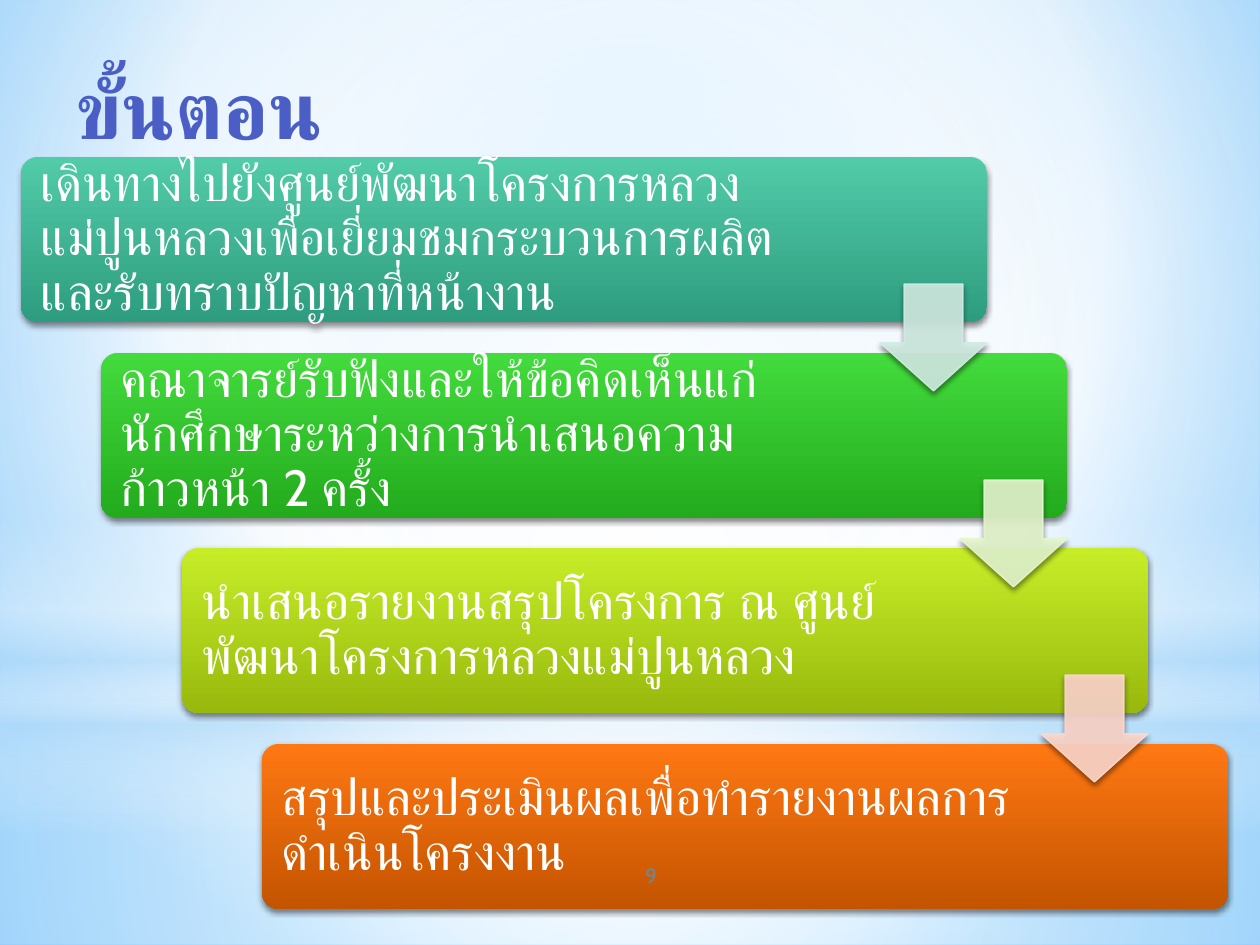
from dataclasses import dataclass

import pptx
import pptx.dml.color
import pptx.enum.shapes
import pptx.enum.text
import pptx.oxml
import pptx.oxml.ns
import pptx.util

SHAPE = pptx.enum.shapes.MSO_SHAPE
ANCHOR = pptx.enum.text.MSO_ANCHOR
ALIGN = pptx.enum.text.PP_ALIGN
qn = pptx.oxml.ns.qn
NAMESPACE = pptx.oxml.ns.nsdecls("a")

PIXELS_PER_INCH = 126
BOX_LEFT, BOX_TOP, BOX_WIDTH, BOX_HEIGHT = 21, 157, 966, 165
ARROW_SIZE, ARROW_DROP = 107, 127
CENTRE = (50, 50, 50, 50)


@dataclass
class Gradient:
    """Stops are (position %, colour, opacity %); focus is l, t, r, b in % or None when linear."""
    stops: list
    focus: tuple | None = None


@dataclass
class Glow:
    shape: int
    top: int
    height: int
    gradient: Gradient


@dataclass
class Step:
    text: str
    light: str
    dark: str
    arrow: str | None = None


GLOWS = [
    Glow(SHAPE.RECTANGLE, 703, 242, Gradient(
        [(0, "FFFFFF", 91), (37, "FFFFFF", 76), (100, "B4DCFA", 79)], CENTRE)),
    Glow(SHAPE.RECTANGLE, 0, 703, Gradient(
        [(0, "FFFFFF", 89), (48, "FFFFFF", 62), (100, "B4DCFA", 79)], CENTRE)),
    Glow(SHAPE.RECTANGLE, 519, 315, Gradient(
        [(0, "FFFFFF", 0), (29, "FFFFFF", 30), (45, "B4DCFA", 40),
         (55, "FFFFFF", 26), (65, "B4DCFA", 60), (100, "FFFFFF", 0)])),
    Glow(SHAPE.OVAL, 220, 703, Gradient([(0, "FFFFFF", 100), (56, "FFFFFF", 0)], CENTRE)),
]

STEPS = [
    Step("เดินทางไปยังศูนย์พัฒนาโครงการหลวงแม่ปูนหลวงเพื่อเยี่ยมชมกระบวนการผลิตและรับทราบปัญหาที่หน้างาน",
         "52CBA9", "2E9D7F", "D2EDE3"),
    Step("คณาจารย์รับฟังและให้ข้อคิดเห็นแก่นักศึกษาระหว่างการนำเสนอความก้าวหน้า 2 ครั้ง",
         "43DB3D", "23AB1D", "E5F7CE"),
    Step("นำเสนอรายงานสรุปโครงการ ณ ศูนย์พัฒนาโครงการหลวงแม่ปูนหลวง",
         "C7ED28", "98B90D", "FFD8CC"),
    Step("สรุปและประเมินผลเพื่อทำรายงานผลการดำเนินโครงงาน", "FF7813", "C45400"),
]


def px(length: int) -> int:
    return pptx.util.Emu(round(length * 914400 / PIXELS_PER_INCH))


def color(value: str) -> pptx.dml.color.RGBColor:
    return pptx.dml.color.RGBColor.from_string(value)


def fill_gradient(fill, owner, gradient: Gradient) -> None:
    """Put a gradient where the fill of the owner element belongs."""
    stops = "".join(
        f'<a:gs pos="{position * 1000}"><a:srgbClr val="{value}">'
        f'<a:alpha val="{opacity * 1000}"/></a:srgbClr></a:gs>'
        for position, value, opacity in gradient.stops)
    if gradient.focus:
        left, top, right, bottom = (side * 1000 for side in gradient.focus)
        direction = (f'<a:path path="circle"><a:fillToRect l="{left}" t="{top}" '
                     f'r="{right}" b="{bottom}"/></a:path>')
    else:
        direction = '<a:lin ang="5400000" scaled="0"/>'
    fill.background()
    owner.replace(owner.find(qn("a:noFill")), pptx.oxml.parse_xml(
        f'<a:gradFill {NAMESPACE} rotWithShape="1"><a:gsLst>{stops}</a:gsLst>{direction}</a:gradFill>'))


def add_shape(slide, kind: int, left: int, top: int, width: int, height: int):
    shape = slide.shapes.add_shape(kind, px(left), px(top), px(width), px(height))
    shape.shadow.inherit = False
    return shape


def add_shadow(shape) -> None:
    shape.element.spPr.find(qn("a:effectLst")).append(pptx.oxml.parse_xml(
        f'<a:outerShdw {NAMESPACE} blurRad="39400" dist="22900" dir="5400000" rotWithShape="0">'
        '<a:srgbClr val="000000"><a:alpha val="45000"/></a:srgbClr></a:outerShdw>'))


def style(paragraph, font: str, size: int, value: str, bold: bool, alignment) -> None:
    paragraph.alignment = alignment
    paragraph.font.name = font
    paragraph.font.size = pptx.util.Pt(size)
    paragraph.font.bold = bold
    paragraph.font.color.rgb = color(value)


def add_glow(slide, glow: Glow) -> None:
    shape = add_shape(slide, glow.shape, 0, glow.top, 1260, glow.height)
    fill_gradient(shape.fill, shape.element.spPr, glow.gradient)
    shape.line.fill.background()


def add_step(slide, step: Step, left: int, top: int) -> None:
    box = add_shape(slide, SHAPE.ROUNDED_RECTANGLE, left, top, BOX_WIDTH, BOX_HEIGHT)
    box.adjustments[0] = 0.1
    fill_gradient(box.fill, box.element.spPr,
                  Gradient([(0, step.light, 100), (100, step.dark, 100)]))
    box.line.fill.background()
    add_shadow(box)
    frame = box.text_frame
    frame.word_wrap = True
    frame.vertical_anchor = ANCHOR.MIDDLE
    frame.margin_left = frame.margin_top = frame.margin_bottom = px(15)
    frame.margin_right = px(200)
    paragraph = frame.paragraphs[0]
    paragraph.text = step.text
    paragraph.line_spacing = 0.9
    style(paragraph, "Cabin", 29, "FFFFFF", False, ALIGN.LEFT)


def add_arrow(slide, value: str, left: int, top: int) -> None:
    arrow = add_shape(slide, SHAPE.DOWN_ARROW, left, top, ARROW_SIZE, ARROW_SIZE)
    arrow.adjustments[0], arrow.adjustments[1] = 0.55, 0.45
    arrow.line.width = pptx.util.Pt(0.75)
    for fill in (arrow.fill, arrow.line.fill):
        fill.solid()
        fill.fore_color.rgb = color(value)
    for element in arrow.element.spPr.iter(qn("a:srgbClr")):
        element.append(pptx.oxml.parse_xml(f'<a:alpha {NAMESPACE} val="90000"/>'))
    add_shadow(arrow)


def place_title(slide, text: str) -> None:
    title = slide.shapes.title
    slide.shapes.element.append(title.element)  # in front of the glows
    title.left, title.top, title.width, title.height = px(63), px(53), px(897), px(157)
    title.text_frame.text = text
    title.text_frame.auto_size = pptx.enum.text.MSO_AUTO_SIZE.NONE
    title.text_frame.vertical_anchor = ANCHOR.TOP
    style(title.text_frame.paragraphs[0], "Calibri", 46, "4A5EC6", True, ALIGN.LEFT)


def add_page_number(slide, number: str) -> None:
    frame = slide.shapes.add_textbox(px(525), px(850), px(252), px(50)).text_frame
    frame.word_wrap = True
    frame.vertical_anchor = ANCHOR.MIDDLE
    frame.text = number
    style(frame.paragraphs[0], "Cabin", 12, "808080", True, ALIGN.CENTER)


def main() -> None:
    presentation = pptx.Presentation()
    presentation.slide_width, presentation.slide_height = px(1260), px(945)
    slide = presentation.slides.add_slide(presentation.slide_layouts[5])
    background = slide.background.fill
    background.background()
    fill_gradient(background, next(slide.element.iter(qn("p:bgPr"))), Gradient(
        [(0, "9ED5FF", 100), (60, "FFFFFF", 100), (100, "5BB9FF", 100)], (20, 10, 20, 60)))
    for glow in GLOWS:
        add_glow(slide, glow)

    corners = [(BOX_LEFT + round(index * 241 / 3), BOX_TOP + round(index * 587 / 3))
               for index in range(len(STEPS))]
    for step, (left, top) in zip(STEPS, corners):
        add_step(slide, step, left, top)
    for step, (left, top) in zip(STEPS, corners):
        if step.arrow:
            add_arrow(slide, step.arrow, left + BOX_WIDTH - ARROW_SIZE, top + ARROW_DROP)

    place_title(slide, "ขั้นตอน")
    add_page_number(slide, "9")
    presentation.save("out.pptx")


if __name__ == "__main__":
    main()
